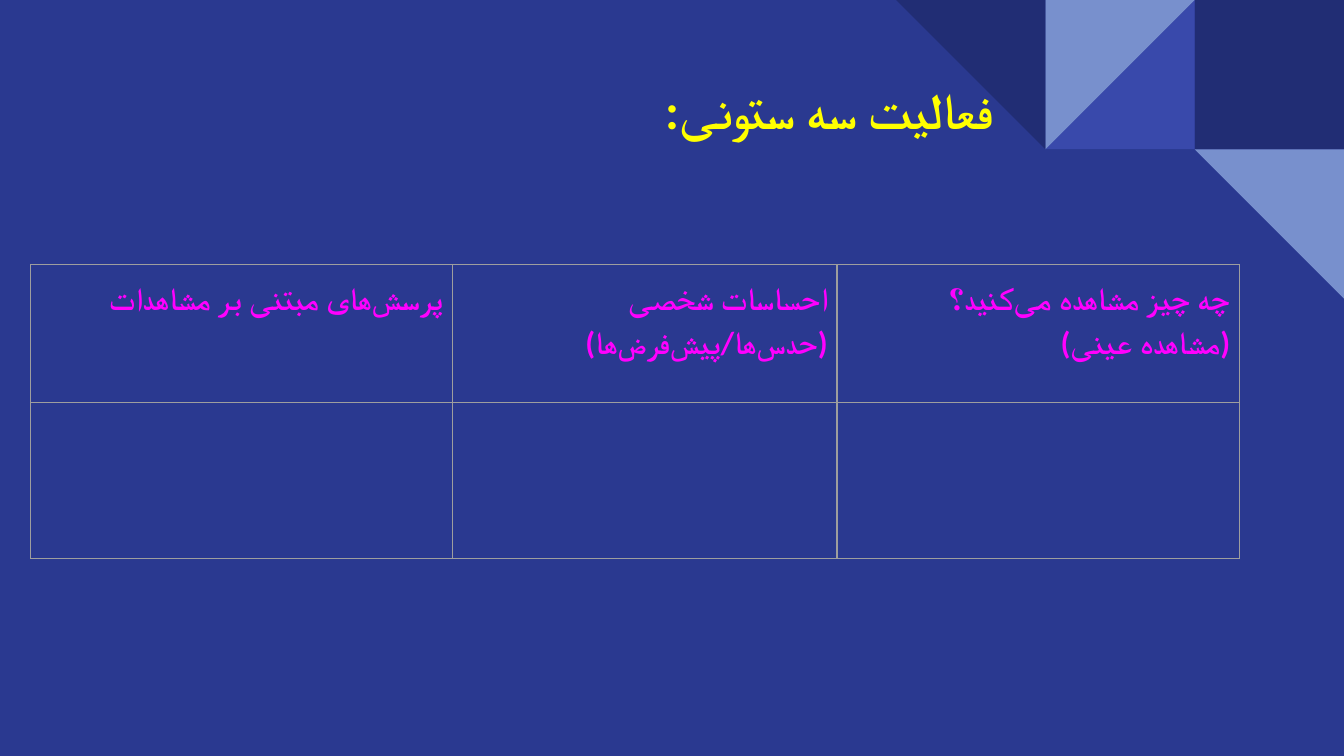
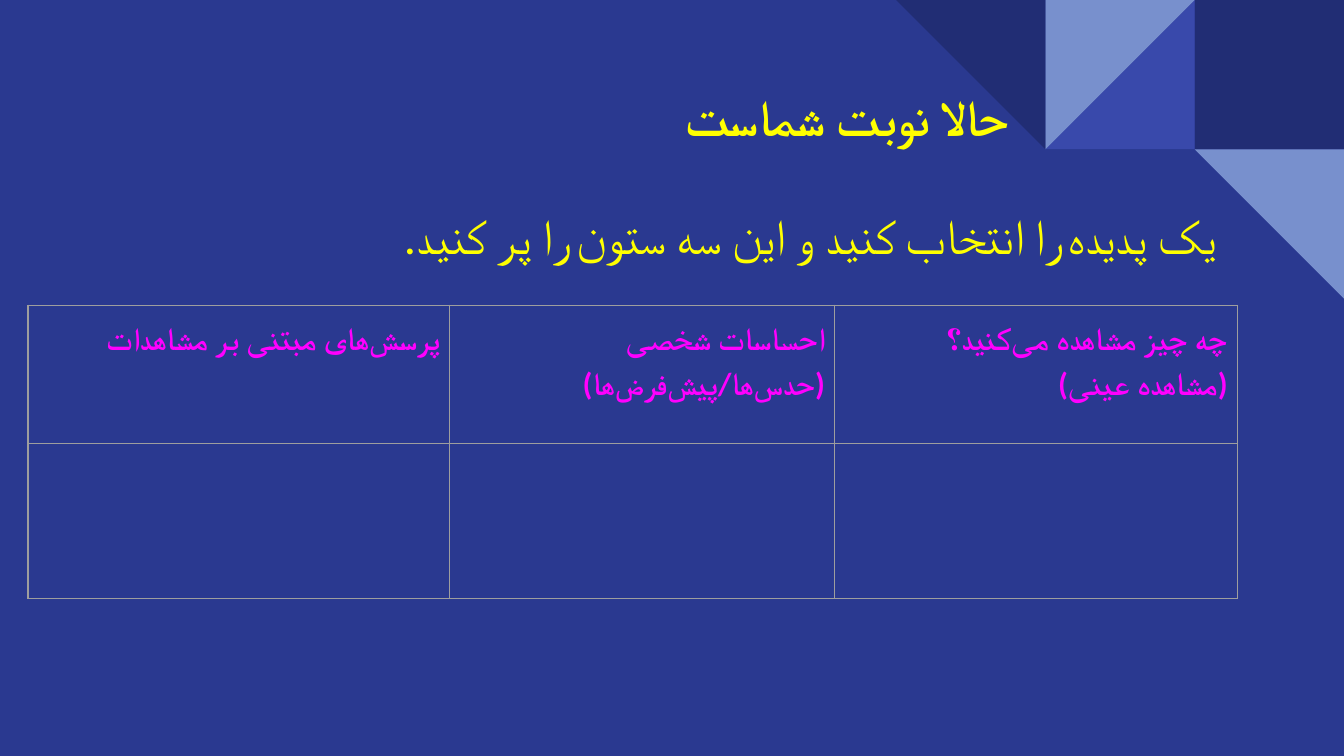
"""Build two slides with a three-column observation activity."""
from dataclasses import dataclass
from typing import NamedTuple

from lxml import etree
from pptx import Presentation
from pptx.dml.color import RGBColor
from pptx.enum import shapes, text
from pptx.oxml import ns
from pptx.util import Cm, Pt


@dataclass(frozen=True)
class Theme:
    """Colours, font and type sizes of the deck."""
    background: str = "2A3990"
    navy: str = "212D74"
    indigo: str = "3949AB"
    sky: str = "7890CD"
    heading: str = "FFFF00"
    column_heading: str = "FF00FF"
    border: str = "9E9E9E"
    border_width: float = 0.75
    font: str = "Calibri"
    title_size: int = 27
    prompt_size: int = 26
    table_size: int = 17
    line_spacing: float = 1.15


class Box(NamedTuple):
    """Position and size in centimetres."""
    left: float
    top: float
    width: float
    height: float


class Tile(NamedTuple):
    """One corner tile on the square grid."""
    column: int
    row: int
    color: str
    preset: shapes.MSO_SHAPE
    rotation: int = 0
    flipped: bool = False


class Style(NamedTuple):
    """Size, colour and weight of a text block."""
    size: int
    color: str
    bold: bool = True


THEME = Theme()
SLIDE_WIDTH, SLIDE_HEIGHT = 25.4, 14.29
TILE_SIZE = SLIDE_WIDTH / 9
RECTANGLE, TRIANGLE = shapes.MSO_SHAPE.RECTANGLE, shapes.MSO_SHAPE.RIGHT_TRIANGLE
TILES = (
    Tile(8, 0, THEME.navy, RECTANGLE),
    Tile(7, 0, THEME.indigo, TRIANGLE, flipped=True),
    Tile(7, 0, THEME.sky, TRIANGLE, 180, flipped=True),
    Tile(6, 0, THEME.navy, TRIANGLE, 180),
    Tile(8, 1, THEME.sky, TRIANGLE, 180),
)
TITLE_STYLE = Style(THEME.title_size, THEME.heading)
PROMPT_STYLE = Style(THEME.prompt_size, THEME.heading, bold=False)
HEADER_STYLE = Style(THEME.table_size, THEME.column_heading)
COLUMN_WIDTHS = (7.97, 7.27, 7.61)
ROW_HEIGHTS = (2.61, 2.94)
NON_JOINER = chr(0x200C)
PLURAL = f"{NON_JOINER}ها"
HEADERS = (
    (f"پرسش{PLURAL}ی مبتنی بر مشاهدات",),
    ("احساسات شخصی", f"(حدس{PLURAL}/پیش{NON_JOINER}فرض{PLURAL})"),
    (f"چه چیز مشاهده می{NON_JOINER}کنید؟", "(مشاهده عینی)"),
)


def write_lines(frame, lines: tuple[str, ...], style: Style) -> None:
    """Write right-to-left paragraphs in one style."""
    for index, line in enumerate(lines):
        paragraph = frame.paragraphs[0] if index == 0 else frame.add_paragraph()
        paragraph.text = line
        paragraph.alignment = text.PP_ALIGN.RIGHT
        paragraph.line_spacing = THEME.line_spacing
        paragraph.space_before = Pt(0)
        font = paragraph.font
        font.name, font.size, font.bold = THEME.font, Pt(style.size), style.bold
        font.color.rgb = RGBColor.from_string(style.color)
        properties = paragraph._p.get_or_add_pPr()
        properties.set("rtl", "1")
        etree.SubElement(properties.find(ns.qn("a:defRPr")), ns.qn("a:cs"), typeface=THEME.font)


def fill_placeholder(shape, box: Box, line: str, style: Style) -> None:
    """Move a placeholder and write its text."""
    shape.left, shape.top, shape.width, shape.height = map(Cm, box)
    frame = shape.text_frame
    frame.word_wrap = True
    frame.auto_size = text.MSO_AUTO_SIZE.NONE
    frame.vertical_anchor = text.MSO_ANCHOR.MIDDLE
    frame.margin_left = frame.margin_right = Cm(0.18)
    frame.margin_top = frame.margin_bottom = Cm(0.1)
    write_lines(frame, (line,), style)


def draw_corner(slide) -> None:
    """Draw the corner tiles behind the slide content."""
    group = slide.shapes.add_group_shape()
    for tile in TILES:
        shape = group.shapes.add_shape(
            tile.preset, Cm(tile.column * TILE_SIZE), Cm(tile.row * TILE_SIZE),
            Cm(TILE_SIZE), Cm(TILE_SIZE))
        shape.shadow.inherit = False
        shape.fill.solid()
        shape.fill.fore_color.rgb = RGBColor.from_string(tile.color)
        shape.line.fill.background()
        shape.rotation = tile.rotation
        if tile.flipped:
            shape._element.spPr.xfrm.set("flipH", "1")
    slide.shapes._spTree.insert(2, group._element)


def draw_borders(cell) -> None:
    """Outline all four sides of a cell."""
    properties = cell._tc.get_or_add_tcPr()
    for index, side in enumerate(("lnL", "lnR", "lnT", "lnB")):
        line = etree.Element(ns.qn(f"a:{side}"), w=str(Pt(THEME.border_width)))
        fill = etree.SubElement(line, ns.qn("a:solidFill"))
        etree.SubElement(fill, ns.qn("a:srgbClr"), val=THEME.border)
        properties.insert(index, line)


def add_activity_table(slide, left: float, top: float) -> None:
    """Add the three-column table with an empty answer row."""
    table = slide.shapes.add_table(
        len(ROW_HEIGHTS), len(COLUMN_WIDTHS), Cm(left), Cm(top),
        Cm(sum(COLUMN_WIDTHS)), Cm(sum(ROW_HEIGHTS))).table
    table.first_row = table.horz_banding = False
    for column, width in zip(table.columns, COLUMN_WIDTHS):
        column.width = Cm(width)
    for row, height in zip(table.rows, ROW_HEIGHTS):
        row.height = Cm(height)
    for cell in table.iter_cells():
        cell.fill.background()
        cell.margin_left = cell.margin_right = Cm(0.18)
        cell.margin_top = cell.margin_bottom = Cm(0.18)
        draw_borders(cell)
    for column, lines in enumerate(HEADERS):
        write_lines(table.cell(0, column).text_frame, lines, HEADER_STYLE)


def add_slide(presentation, layout_index: int, title: str, title_box: Box):
    """Add a slide with the corner tiles and a title."""
    slide = presentation.slides.add_slide(presentation.slide_layouts[layout_index])
    draw_corner(slide)
    fill_placeholder(slide.shapes.title, title_box, title, TITLE_STYLE)
    return slide


def main() -> None:
    """Build and save the presentation."""
    presentation = Presentation()
    presentation.slide_width, presentation.slide_height = Cm(SLIDE_WIDTH), Cm(SLIDE_HEIGHT)
    background = presentation.slide_master.background.fill
    background.solid()
    background.fore_color.rgb = RGBColor.from_string(THEME.background)

    activity = add_slide(presentation, 5, "فعالیت سه ستونی:", Box(-3.86, 0.81, 22.83, 2.34))
    add_activity_table(activity, 0.58, 5)

    practice = add_slide(presentation, 0, "حالا نوبت شماست", Box(-3.58, 0.94, 22.83, 2.34))
    fill_placeholder(practice.placeholders[1], Box(0.71, 3.63, 22.48, 1.47),
                     "یک پدیده را انتخاب کنید و این سه ستون را پر کنید.", PROMPT_STYLE)
    add_activity_table(practice, 0.53, 5.77)
    presentation.save("out.pptx")


if __name__ == "__main__":
    main()
